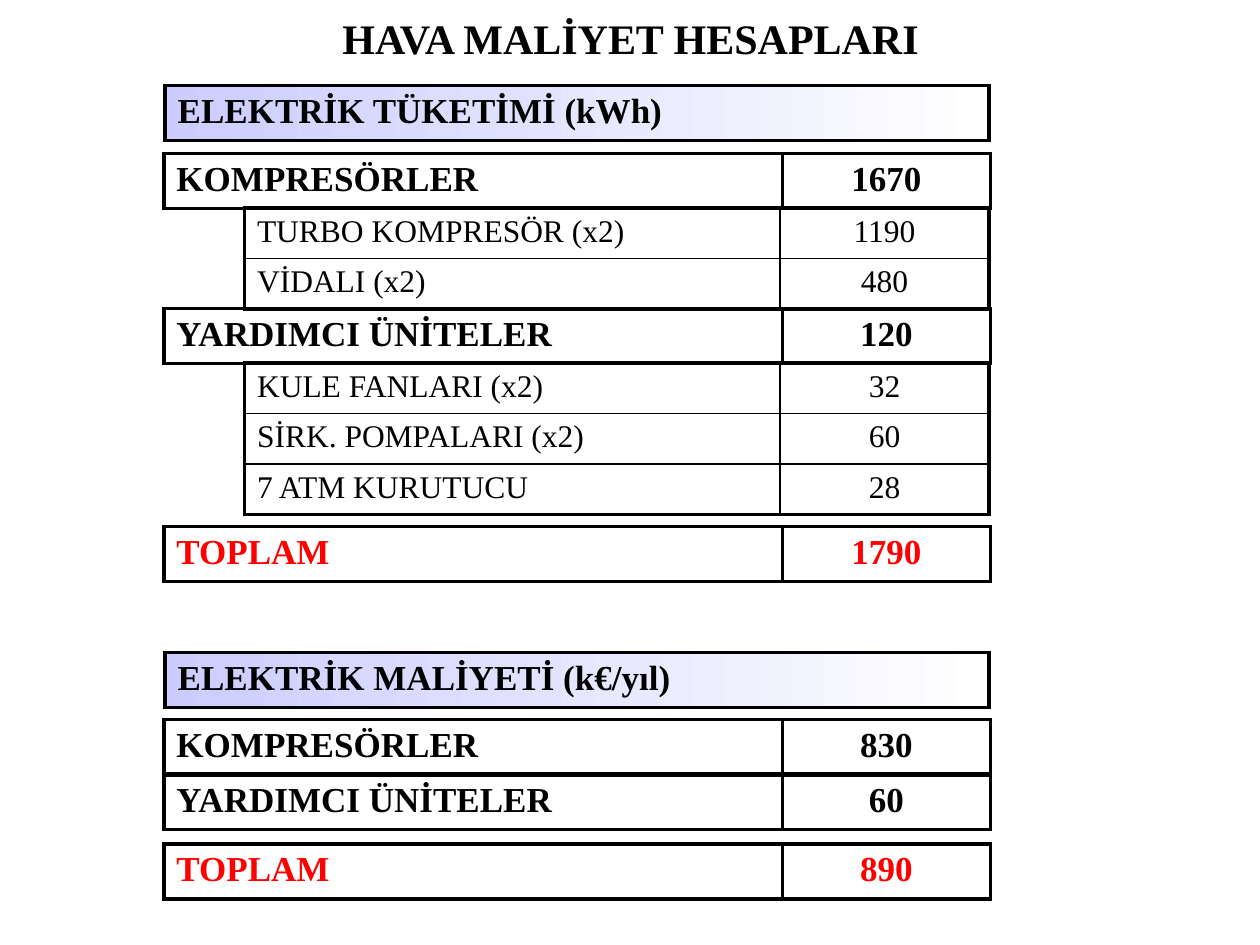
from dataclasses import dataclass

import lxml.etree
import pptx
import pptx.dml.color
import pptx.enum.text
import pptx.oxml.ns
import pptx.util

Inches, Pt = pptx.util.Inches, pptx.util.Pt
ALIGN = pptx.enum.text.PP_ALIGN
COLORS = {"text": "000000", "total": "FF0000", "line": "000000",
          "band_start": "CCCCFF", "band_end": "FFFFFF"}
FONT = "Times New Roman"
THICK, THIN = 2.25, 1


@dataclass(frozen=True)
class Style:
    left: float
    widths: tuple[float, ...]
    row_height: float
    size: int
    bold: bool = True
    color: str = "text"
    inner_line: float = THICK
    band: bool = False


HEADER = Style(1.31, (6.54,), 0.43, 20, band=True)
GROUP = Style(1.3, (4.91, 1.65), 0.43, 20)
DETAIL = Style(1.94, (4.25, 1.66), 0.4, 18, bold=False, inner_line=THIN)
TOTAL = Style(1.3, (4.91, 1.65), 0.43, 20, color="total")


@dataclass(frozen=True)
class Block:
    top: float
    style: Style
    rows: tuple[tuple[str, ...], ...]


BLOCKS = [
    Block(1.22, GROUP, (("KOMPRESÖRLER", "1670"),)),
    Block(1.65, DETAIL, (("TURBO KOMPRESÖR (x2)", "1190"), ("VİDALI (x2)", "480"))),
    Block(2.45, GROUP, (("YARDIMCI ÜNİTELER", "120"),)),
    Block(2.88, DETAIL, (("KULE FANLARI (x2)", "32"), ("SİRK. POMPALARI (x2)", "60"),
                         ("7 ATM KURUTUCU", "28"))),
    Block(4.18, TOTAL, (("TOPLAM", "1790"),)),
    Block(0.68, HEADER, (("ELEKTRİK TÜKETİMİ (kWh)",),)),
    Block(5.18, HEADER, (("ELEKTRİK MALİYETİ (k€/yıl)",),)),
    Block(5.71, GROUP, (("KOMPRESÖRLER", "830"),)),
    Block(6.15, GROUP, (("YARDIMCI ÜNİTELER", "60"),)),
    Block(6.7, TOTAL, (("TOPLAM", "890"),)),
]


def rgb(name: str) -> pptx.dml.color.RGBColor:
    return pptx.dml.color.RGBColor.from_string(COLORS[name])


def set_text(tf, text: str, size: int, bold: bool, color: str, align) -> None:
    p = tf.paragraphs[0]
    p.text = text
    p.alignment = align
    p.font.name, p.font.size, p.font.bold = FONT, Pt(size), bold
    p.font.color.rgb = rgb(color)


def set_borders(cell, widths: dict[str, float]) -> None:
    """Put border lines ahead of the cell fill, as the schema orders them."""
    qn = pptx.oxml.ns.qn
    tc_pr = cell._tc.get_or_add_tcPr()
    for i, (side, width) in enumerate(widths.items()):
        ln = lxml.etree.Element(qn(f"a:ln{side}"), w=str(int(Pt(width))))
        fill = lxml.etree.SubElement(ln, qn("a:solidFill"))
        lxml.etree.SubElement(fill, qn("a:srgbClr"), val=COLORS["line"])
        tc_pr.insert(i, ln)


def fill_cell(cell, band: bool) -> None:
    if not band:
        cell.fill.background()
        return
    cell.fill.gradient()
    cell.fill.gradient_angle = 0
    for stop, name in zip(cell.fill.gradient_stops, ("band_start", "band_end")):
        stop.color.rgb = rgb(name)


def add_block(slide, block: Block) -> None:
    style, n_rows, n_cols = block.style, len(block.rows), len(block.style.widths)
    table = slide.shapes.add_table(
        n_rows, n_cols, Inches(style.left), Inches(block.top),
        Inches(sum(style.widths)), Inches(style.row_height * n_rows)).table
    table.first_row = table.horz_banding = False
    for column, width in zip(table.columns, style.widths):
        column.width = Inches(width)
    for r, row in enumerate(block.rows):
        table.rows[r].height = Inches(style.row_height)
        for c, text in enumerate(row):
            cell = table.cell(r, c)
            set_text(cell.text_frame, text, style.size, style.bold, style.color,
                     ALIGN.CENTER if c else ALIGN.LEFT)
            fill_cell(cell, style.band)
            outer = {"L": c == 0, "R": c == n_cols - 1,
                     "T": r == 0, "B": r == n_rows - 1}
            set_borders(cell, {side: THICK if edge else style.inner_line
                               for side, edge in outer.items()})


def add_title(slide, text: str) -> None:
    tf = slide.shapes.add_textbox(
        Inches(1.46), Inches(0.05), Inches(7.09), Inches(0.5)).text_frame
    tf.word_wrap = True
    set_text(tf, text, 24, True, "text", ALIGN.CENTER)


def main() -> None:
    prs = pptx.Presentation()
    prs.slide_width, prs.slide_height = Inches(10), Inches(7.5)
    slide = prs.slides.add_slide(prs.slide_layouts[6])
    add_title(slide, "HAVA MALİYET HESAPLARI")
    for block in BLOCKS:
        add_block(slide, block)
    prs.save("out.pptx")


if __name__ == "__main__":
    main()
